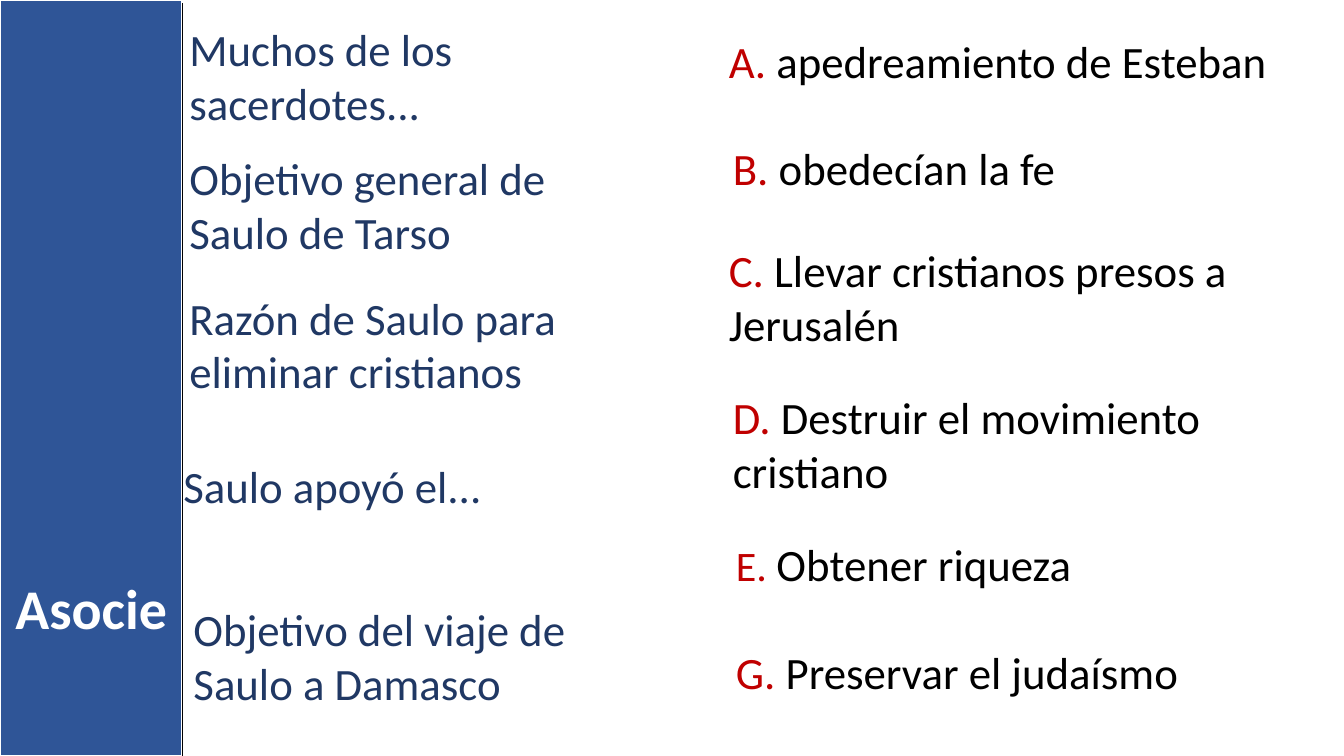
"""Build the matching-exercise slide that pairs prompts with lettered answers."""
from dataclasses import dataclass

from lxml import etree
from pptx import Presentation
from pptx import util as u
from pptx.dml.color import RGBColor
from pptx.enum import shapes, text
from pptx.oxml.ns import qn

COLORS = {
    "band": "2F5597",
    "prompt": "203864",
    "letter": "C00000",
    "answer": "000000",
    "white": "FFFFFF",
    "rule": "000000",
}
BAND_WIDTH = 1.81
ONE_LINE, TWO_LINES = 0.64, 1.18
FORMAT = {"name": "Calibri", "size": u.Pt(32), "bold": False}
TITLE_FORMAT = {**FORMAT, "size": u.Pt(40), "bold": True}
FRAME = {"word_wrap": True, "auto_size": text.MSO_AUTO_SIZE.SHAPE_TO_FIT_TEXT}


@dataclass(frozen=True)
class Box:
    left: float
    top: float
    width: float
    height: float


@dataclass(frozen=True)
class Prompt:
    box: Box
    wording: str


@dataclass(frozen=True)
class Answer:
    box: Box
    letter: str
    wording: str
    letter_size: int = 32


PROMPTS = [
    Prompt(Box(1.78, 0.17, 4.93, TWO_LINES), "Muchos de los sacerdotes..."),
    Prompt(Box(1.78, 1.45, 4.62, TWO_LINES), "Objetivo general de Saulo de Tarso"),
    Prompt(Box(1.78, 2.83, 4.6, TWO_LINES), "Razón de Saulo para eliminar cristianos"),
    Prompt(Box(1.72, 4.5, 4.6, ONE_LINE), "Saulo apoyó el..."),
    Prompt(Box(1.82, 5.92, 4.41, TWO_LINES), "Objetivo del viaje de Saulo a Damasco"),
]
ANSWERS = [
    Answer(Box(7.13, 0.29, 5.6, ONE_LINE), "A", "apedreamiento de Esteban"),
    Answer(Box(7.17, 1.35, 5.92, ONE_LINE), "B", "obedecían la fe"),
    Answer(Box(7.13, 2.36, 5.74, TWO_LINES), "C", "Llevar cristianos presos a Jerusalén"),
    Answer(Box(7.17, 3.82, 5.8, TWO_LINES), "D", "Destruir el movimiento cristiano"),
    Answer(Box(7.2, 5.28, 5.53, ONE_LINE), "E", "Obtener riqueza", 30),
    Answer(Box(7.2, 6.35, 5.59, ONE_LINE), "G", "Preservar el judaísmo"),
]


def rgb(name: str) -> RGBColor:
    return RGBColor.from_string(COLORS[name])


def apply(target, values: dict) -> None:
    for key, value in values.items():
        setattr(target, key, value)


def add_paragraph_box(s, box: Box):
    lengths = (u.Inches(n) for n in (box.left, box.top, box.width, box.height))
    tf = s.shapes.add_textbox(*lengths).text_frame
    apply(tf, FRAME)
    return tf.paragraphs[0]


def add_run(p, wording: str, color: str, values: dict = FORMAT) -> None:
    r = p.add_run()
    r.text = wording
    apply(r.font, values)
    r.font.color.rgb = rgb(color)


def draw_prompt(s, prompt: Prompt) -> None:
    add_run(add_paragraph_box(s, prompt.box), prompt.wording, "prompt")


def draw_answer(s, answer: Answer) -> None:
    p = add_paragraph_box(s, answer.box)
    add_run(p, f"{answer.letter}. ", "letter", {**FORMAT, "size": u.Pt(answer.letter_size)})
    add_run(p, answer.wording, "answer")


def draw_band(s) -> None:
    sp = s.shapes.add_shape(
        shapes.MSO_SHAPE.RECTANGLE, 0, 0, u.Inches(BAND_WIDTH), u.Inches(7.5)
    )
    sp.shadow.inherit = False
    sp.fill.solid()
    sp.fill.fore_color.rgb = rgb("band")
    sp.line.color.rgb = rgb("white")
    sp.line.width = u.Pt(1.5)


def draw_title(s) -> None:
    p = add_paragraph_box(s, Box(0, 5.64, BAND_WIDTH, 0.77))
    p.alignment = text.PP_ALIGN.CENTER
    add_run(p, "Asocie", "white", TITLE_FORMAT)


def draw_rule(s) -> None:
    x = u.Inches(BAND_WIDTH)
    rule = s.shapes.add_connector(
        shapes.MSO_CONNECTOR.STRAIGHT, x, u.Inches(0.03), x, u.Inches(7.5)
    )
    rule.line.color.rgb = rgb("rule")
    rule.line.width = u.Pt(1)
    etree.SubElement(rule.element.spPr, qn("a:effectLst"))


def main() -> None:
    prs = Presentation()
    prs.slide_width, prs.slide_height = u.Inches(13.33), u.Inches(7.5)
    s = prs.slides.add_slide(prs.slide_layouts[6])
    draw_band(s)
    for prompt in PROMPTS:
        draw_prompt(s, prompt)
    for answer in ANSWERS:
        draw_answer(s, answer)
    draw_title(s)
    draw_rule(s)
    prs.save("out.pptx")


if __name__ == "__main__":
    main()
